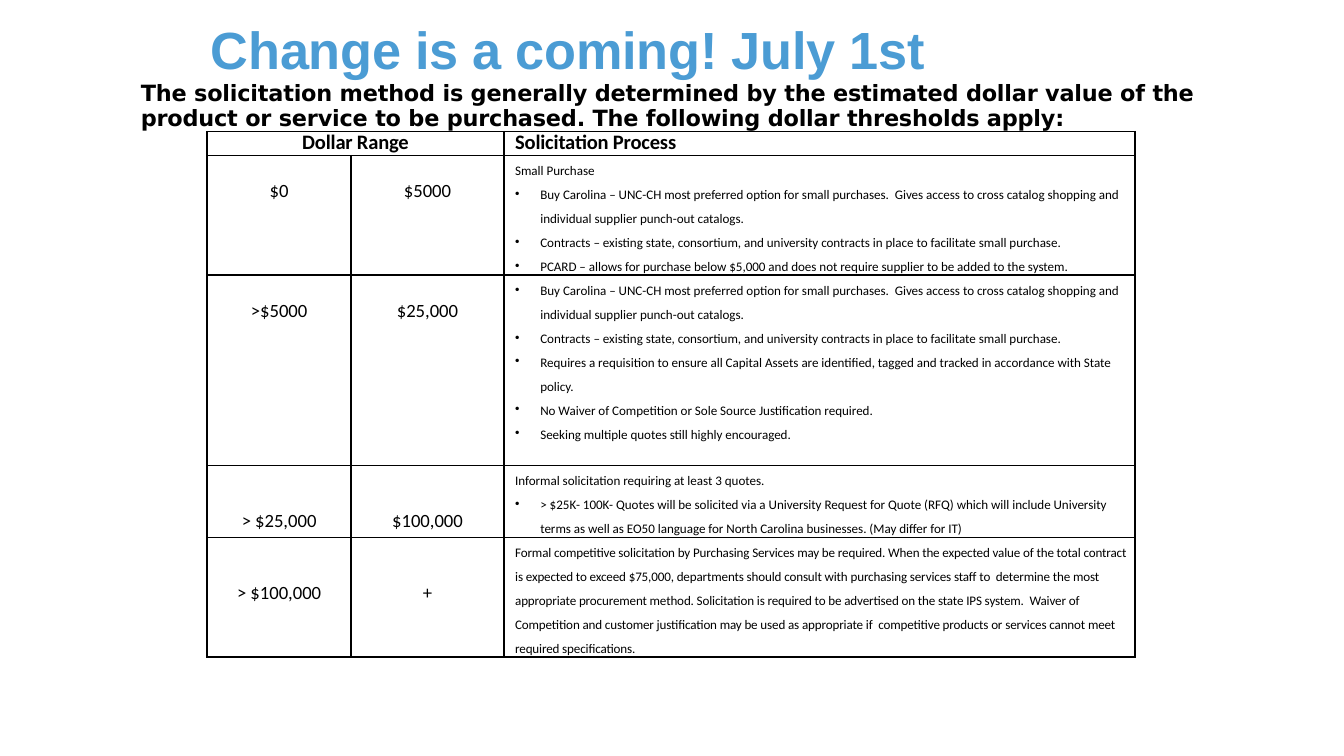
from pptx import Presentation
from pptx.dml.color import RGBColor
from pptx.enum.text import PP_ALIGN as Align
from pptx.oxml import parse_xml
from pptx.oxml.ns import nsdecls
from pptx.util import Pt

BLACK = RGBColor(0x00, 0x00, 0x00)
WHITE = RGBColor(0xFF, 0xFF, 0xFF)
CAROLINA_BLUE = RGBColor(0x4B, 0x9C, 0xD4)

BUY = ("Buy Carolina – UNC-CH most preferred option for small purchases.  Gives access to "
       "cross catalog shopping and individual supplier punch-out catalogs.")
CONTRACTS = ("Contracts – existing state, consortium, and university contracts in place to "
             "facilitate small purchase.")

# row height, space above the amounts, from, to, plain lead line, bullets
THRESHOLDS = [
    (64, 13, "$0", "$5000", "Small Purchase",
     [BUY, CONTRACTS,
      "PCARD – allows for purchase below $5,000 and does not require supplier to be added "
      "to the system."]),
    (102, 13, ">$5000", "$25,000", None,
     [BUY, CONTRACTS,
      "Requires a requisition to ensure all Capital Assets are identified, tagged and "
      "tracked in accordance with State policy.",
      "No Waiver of Competition or Sole Source Justification required.",
      "Seeking multiple quotes still highly encouraged."]),
    (38.4, 23.6, "> $25,000", "$100,000",
     "Informal solicitation requiring at least 3 quotes.",
     ["> $25K- 100K- Quotes will be solicited via a University Request for Quote (RFQ) which "
      "will include University terms as well as EO50 language for North Carolina businesses. "
      "(May differ for IT)"]),
    (64, 24, "> $100,000", "+",
     "Formal competitive solicitation by Purchasing Services may be required. When the "
     "expected value of the total contract is expected to exceed $75,000, departments should "
     "consult with purchasing services staff to  determine the most appropriate procurement "
     "method. Solicitation is required to be advertised on the state IPS system.  Waiver of "
     "Competition and customer justification may be used as appropriate if  competitive "
     "products or services cannot meet required specifications.", []),
]


def write(p, text, size, font="Calibri", color=BLACK, bold=False, spacing=0):
    """Fill a paragraph with one run; spacing is in hundredths of a point."""
    p.text = text
    for r in p.runs:
        r.font.size, r.font.name, r.font.bold = Pt(size), font, bold
        r.font.color.rgb = color
        if spacing:
            r._r.get_or_add_rPr().set("spc", str(spacing))


def indent(p, left, hanging=0):
    """Indent a paragraph, with a bullet if the first line hangs."""
    pPr = p._p.get_or_add_pPr()
    pPr.set("marL", str(Pt(left)))
    pPr.set("indent", str(-Pt(hanging)))
    if hanging:
        pPr.append(parse_xml(f'<a:buChar {nsdecls("a")} char="•"/>'))
    p.line_spacing = Pt(12.8)


prs = Presentation()
prs.slide_width, prs.slide_height = Pt(720), Pt(405)
s = prs.slides.add_slide(prs.slide_layouts[6])

# Title and introduction
headings = [
    ((113, 6.5, 495, 34.5), 2.5, "Change is a coming! July 1st", 28, "Arial", CAROLINA_BLUE),
    ((75.5, 41, 570, 30), 3,
     "The solicitation method is generally determined by the estimated dollar value of the  "
     "product or service to be purchased. The following dollar thresholds apply:",
     12, "DejaVu Sans", BLACK),
]
for box, inset, text, size, font, color in headings:
    tf = s.shapes.add_textbox(*map(Pt, box)).text_frame
    tf.word_wrap = True
    tf.margin_left = tf.margin_right = tf.margin_bottom = 0
    tf.margin_top = Pt(inset)
    write(tf.paragraphs[0], text, size, font, color, True, -10)
tf.paragraphs[0].line_spacing = Pt(13)

# Threshold table
heights = [12.8] + [row[0] for row in THRESHOLDS]
widths = [77, 82, 338]
table = s.shapes.add_table(len(heights), len(widths), Pt(111), Pt(70.5),
                           Pt(sum(widths)), Pt(sum(heights))).table
table.first_row = table.horz_banding = False
for column, width in zip(table.columns, widths):
    column.width = Pt(width)
for row, height in zip(table.rows, heights):
    row.height = Pt(height)

for cell in table.iter_cells():
    cell.margin_left = cell.margin_right = cell.margin_top = cell.margin_bottom = 0
    tcPr = cell._tc.get_or_add_tcPr()
    for side in "LRTB":
        tcPr.append(parse_xml(
            f'<a:ln{side} {nsdecls("a")} w="{Pt(1)}"><a:solidFill>'
            f'<a:srgbClr val="{BLACK}"/></a:solidFill></a:ln{side}>'))
    cell.fill.solid()
    cell.fill.fore_color.rgb = WHITE

table.cell(0, 0).merge(table.cell(0, 1))
for col, text, left in [(0, "Dollar Range", 0), (2, "Solicitation Process", 6)]:
    p = table.cell(0, col).text_frame.paragraphs[0]
    indent(p, left)
    write(p, text, 11, bold=True, spacing=-10)
table.cell(0, 0).text_frame.paragraphs[0].alignment = Align.CENTER

for i, (_, space, low, high, lead, bullets) in enumerate(THRESHOLDS, start=1):
    for col, amount in enumerate((low, high)):
        cell = table.cell(i, col)
        cell.margin_top = Pt(space)
        p = cell.text_frame.paragraphs[0]
        p.alignment = Align.CENTER
        write(p, amount, 10)

    tf = table.cell(i, 2).text_frame
    p = tf.paragraphs[0]
    if lead:
        indent(p, 6)
        write(p, lead, 7, spacing=0 if bullets else -7)
    for n, bullet in enumerate(bullets):
        if lead or n:
            p = tf.add_paragraph()
        indent(p, 19.5, 13.5)
        write(p, bullet, 7)

prs.save("out.pptx")
